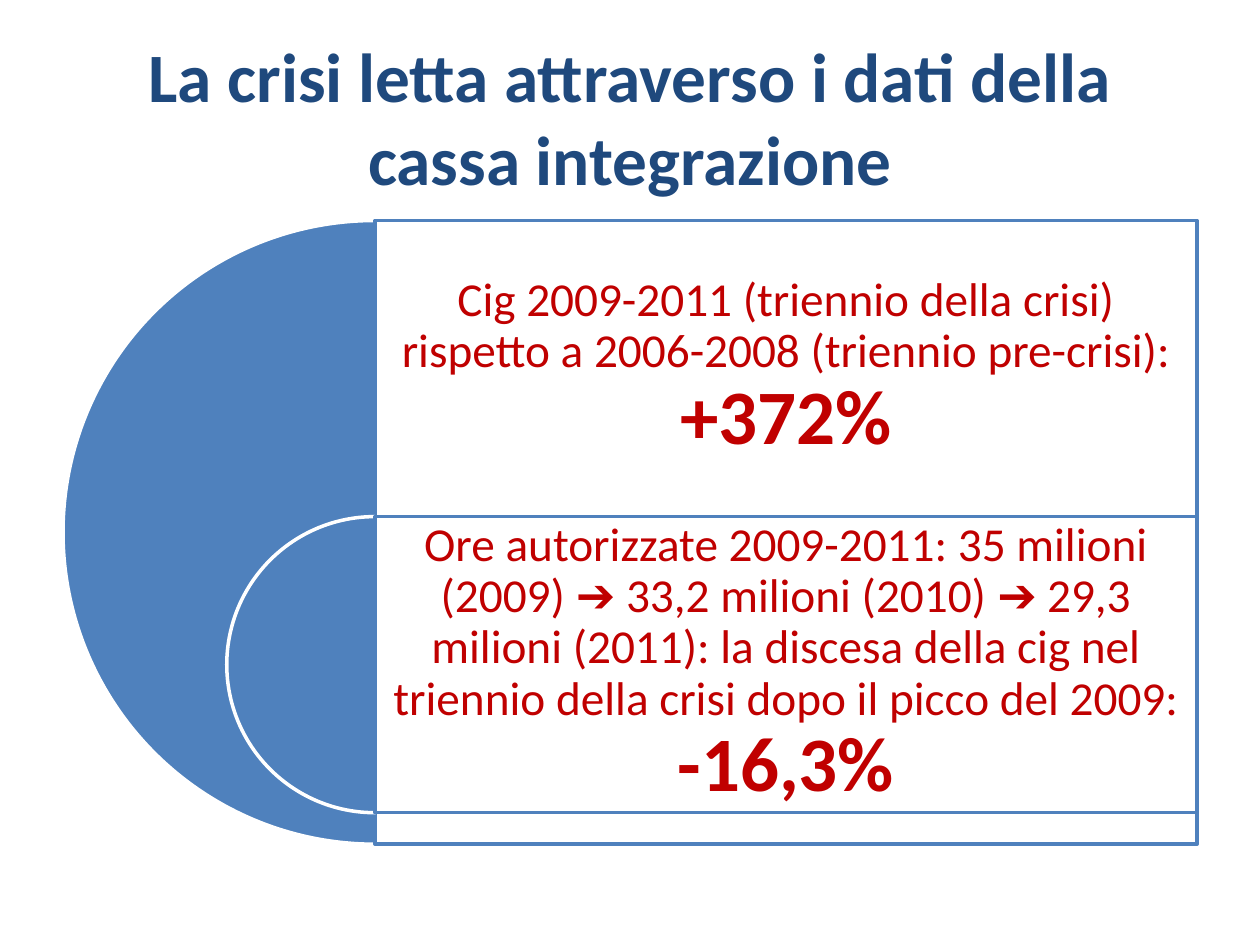
import pptx
import pptx.dml.color
import pptx.enum.shapes
import pptx.enum.text
import pptx.oxml
import pptx.oxml.ns
import pptx.util

Pt = pptx.util.Pt
RGB = pptx.dml.color.RGBColor
SHAPE = pptx.enum.shapes.MSO_SHAPE
ALIGN = pptx.enum.text.PP_ALIGN
ANCHOR = pptx.enum.text.MSO_ANCHOR

THEME = {
    "font": "Calibri",
    "navy": RGB(0x1F, 0x49, 0x7D),
    "blue": RGB(0x4F, 0x81, 0xBD),
    "red": RGB(0xC0, 0x00, 0x00),
    "white": RGB(0xFF, 0xFF, 0xFF),
    "title_size": 39.6,
    "body_size": 27,
    "figure_size": 44,
}


def add_panel(page, kind, bounds, fill, line):
    shape = page.shapes.add_shape(kind, *[Pt(length) for length in bounds])
    shape.shadow.inherit = False
    shape.fill.solid()
    shape.fill.fore_color.rgb = fill
    shape.line.color.rgb = line
    shape.line.width = Pt(2)
    return shape


def format_span(span, size, color, bold):
    span.font.name = THEME["font"]
    span.font.size = Pt(size)
    span.font.color.rgb = color
    span.font.bold = bold


deck = pptx.Presentation()
deck.slide_width, deck.slide_height = Pt(720), Pt(540)
page = deck.slides.add_slide(deck.slide_layouts[5])

# Title
title = page.shapes.title
title.left, title.top, title.width, title.height = Pt(36), Pt(21.6), Pt(648), Pt(90)
title.text_frame.text = "La crisi letta attraverso i dati della cassa integrazione"
title.text_frame.word_wrap = True
title.text_frame.vertical_anchor = ANCHOR.MIDDLE
heading = title.text_frame.paragraphs[0]
heading.alignment = ALIGN.CENTER
format_span(heading.runs[0], THEME["title_size"], THEME["navy"], True)

# Nested half discs share a centre line, where the panels begin
center, panel_width = 214.2, 469.8
text_height = 169.2
levels = [
    (126, 356.4,
     "Cig 2009-2011 (triennio della crisi) rispetto a 2006-2008 (triennio pre-crisi): ",
     "+372%"),
    (295.2, text_height,
     "Ore autorizzate 2009-2011: 35 milioni (2009) ➔ 33,2 milioni (2010) ➔ 29,3 "
     "milioni (2011): la discesa della cig nel triennio della crisi dopo il picco del 2009: ",
     "-16,3%"),
]

for top, diameter, message, figure in levels:
    # Left half of a disc
    disc = add_panel(page, SHAPE.PIE, (center - diameter / 2, top, diameter, diameter),
                     THEME["blue"], THEME["white"])
    disc.adjustments[0], disc.adjustments[1] = 54, 162

    # Slightly transparent panel
    panel = add_panel(page, SHAPE.RECTANGLE, (center, top, panel_width, diameter),
                      THEME["white"], THEME["blue"])
    color = panel.fill._xPr.find(".//" + pptx.oxml.ns.qn("a:srgbClr"))
    color.append(pptx.oxml.parse_xml(
        '<a:alpha xmlns:a="http://schemas.openxmlformats.org/drawingml/2006/main" val="90000"/>'))

    # Message with its key figure
    box = page.shapes.add_textbox(Pt(center), Pt(top), Pt(panel_width), Pt(text_height))
    frame = box.text_frame
    frame.word_wrap = True
    frame.vertical_anchor = ANCHOR.MIDDLE
    frame.margin_left = frame.margin_right = Pt(8)
    frame.margin_top = frame.margin_bottom = Pt(8)
    para = frame.paragraphs[0]
    para.alignment = ALIGN.CENTER
    para.line_spacing = 0.9
    for words, size, bold in ((message, THEME["body_size"], False),
                              (figure, THEME["figure_size"], True)):
        span = para.add_run()
        span.text = words
        format_span(span, size, THEME["red"], bold)

deck.save("out.pptx")
